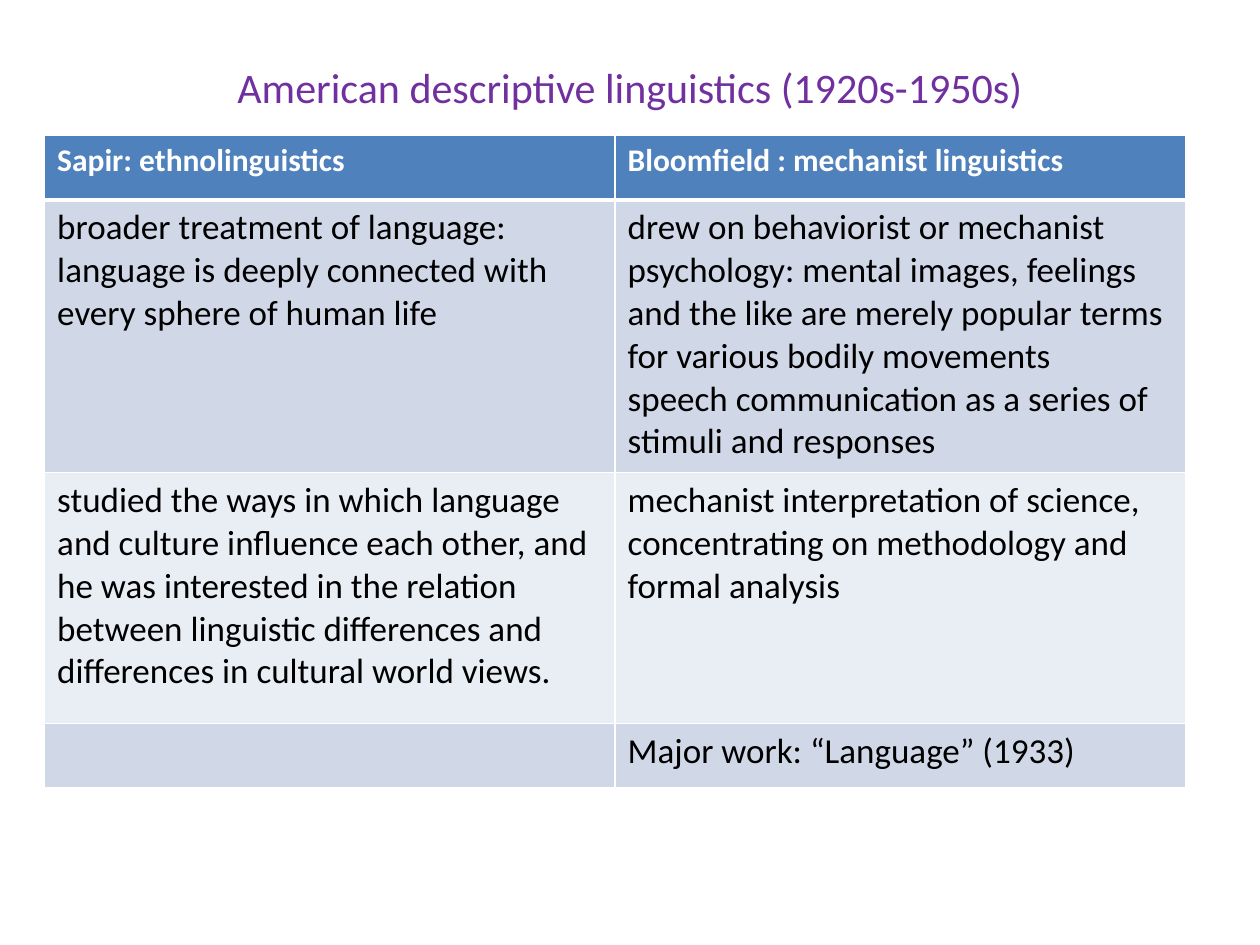
from lxml.etree import SubElement
from pptx import Presentation
from pptx.dml.color import RGBColor
from pptx.enum.text import MSO_ANCHOR, PP_ALIGN
from pptx.oxml.ns import qn
from pptx.util import Cm, Pt

HUES = {"title": "7030A0", "head": "4F81BD", "odd": "D0D8E8",
        "even": "E9EDF4", "white": "FFFFFF", "black": "000000"}

ROWS = [
    ("Sapir: ethnolinguistics", "Bloomfield : mechanist linguistics"),
    ("broader treatment of language:\n"
     "language is deeply connected with every sphere of human life",
     "drew on behaviorist or mechanist psychology: mental images, feelings "
     "and the like are merely popular terms for various bodily movements\n"
     "speech communication as a series of stimuli and responses"),
    ("studied the ways in which language and culture influence each other, "
     "and he was interested in the relation between linguistic differences "
     "and differences in cultural world views.",
     "mechanist interpretation of science, concentrating on methodology "
     "and formal analysis"),
    ("", "Major work: “Language” (1933)"),
]
HIGHS = [1.3, 5.5, 5.06, 1.3]


class Deck:
    """Holds the style and the current slide."""

    def __init__(self, font, wide, high):
        self.font = font
        self.deck = Presentation()
        self.deck.slide_width, self.deck.slide_height = Cm(wide), Cm(high)
        self.slide = self.deck.slides.add_slide(self.deck.slide_layouts[5])

    def label(self, frame, text, hue, **form):
        frame.text = text
        for para in frame.paragraphs:
            for run in para.runs:
                for name, value in {"name": self.font, **form}.items():
                    setattr(run.font, name, value)
                run.font.color.rgb = RGBColor.from_string(HUES[hue])

    def title(self, text, left, top, wide, high):
        shape = self.slide.shapes.title
        place = {"left": left, "top": top, "width": wide, "height": high}
        for name, value in place.items():
            setattr(shape, name, Cm(value))
        self.label(shape.text_frame, text, "title", size=Pt(24))
        shape.text_frame.vertical_anchor = MSO_ANCHOR.MIDDLE
        shape.text_frame.paragraphs[0].alignment = PP_ALIGN.CENTER

    def edge(self, cell, **widths):
        props = cell._tc.get_or_add_tcPr()
        for side in "LRTB":
            line = SubElement(props, qn(f"a:ln{side}"),
                              w=str(Pt(widths.get(side, 1))))
            fill = SubElement(line, qn("a:solidFill"))
            SubElement(fill, qn("a:srgbClr"), val=HUES["white"])

    def table(self, rows, highs, left, top, wide):
        count = len(rows[0])
        table = self.slide.shapes.add_table(
            len(rows), count, Cm(left), Cm(top), Cm(wide), Cm(sum(highs))).table
        for col in table.columns:
            col.width = Cm(wide / count)
        for i, (texts, high) in enumerate(zip(rows, highs)):
            table.rows[i].height = Cm(high)
            # The header row differs; the body rows are banded
            head = i == 0
            band = "head" if head else ("even", "odd")[i % 2]
            form = {"size": Pt(18 if head else 20), "bold": head}
            thick = {0: {"B": 3}, 1: {"T": 3}}.get(i, {})
            for j, text in enumerate(texts):
                cell = table.cell(i, j)
                self.edge(cell, **thick)
                cell.fill.solid()
                cell.fill.fore_color.rgb = RGBColor.from_string(HUES[band])
                self.label(cell.text_frame, text,
                           "white" if head else "black", **form)


def main():
    show = Deck("Calibri", 25.4, 19.05)
    # Heading
    show.title("American descriptive linguistics (1920s-1950s)",
               1.27, 0.76, 22.86, 1.96)
    # Comparison
    show.table(ROWS, HIGHS, 0.9, 2.73, 23)
    show.deck.save("out.pptx")


if __name__ == "__main__":
    main()
